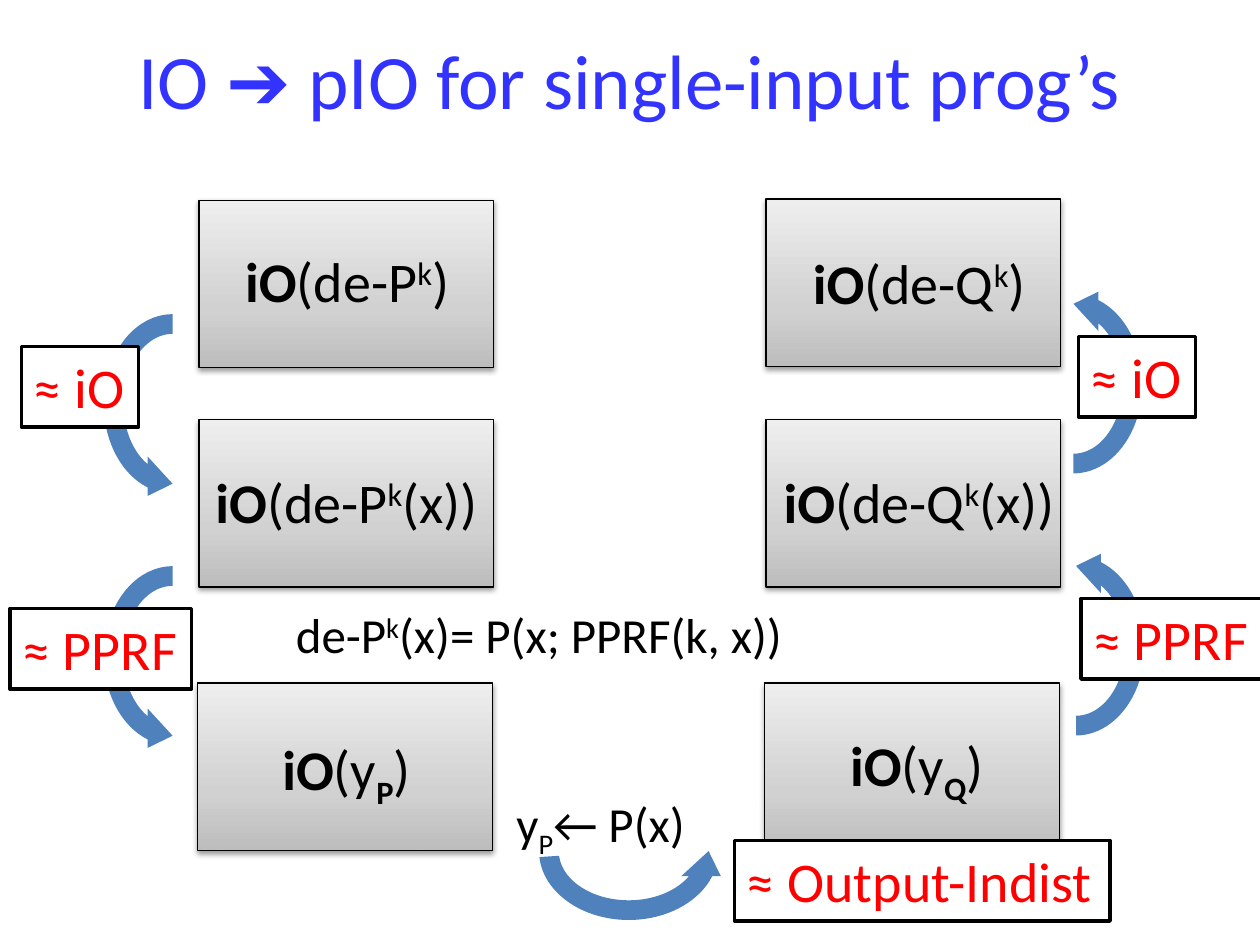
from dataclasses import dataclass

from lxml.etree import SubElement
from pptx import Presentation
from pptx.dml.color import RGBColor
from pptx.enum.shapes import MSO_SHAPE
from pptx.enum.text import MSO_ANCHOR, MSO_AUTO_SIZE, PP_ALIGN
from pptx.oxml import parse_xml
from pptx.oxml.ns import nsdecls, qn
from pptx.util import Inches, Pt

FONT = "Calibri"
BLACK, RED, BLUE, STEEL, WHITE = "000000", "FF0000", "3333FF", "4F81BD", "FFFFFF"
BOX_WIDTH, BOX_HEIGHT = 2.34, 1.33
ARROW_WIDTH, ARROW_HEIGHT = 1.58, 1.25
LABEL_HEIGHT = 0.64
SUPER, SUB = 30000, -25000
GRADIENT_STOPS = ((0, "BDBDBD"), (35000, "D1D1D1"), (100000, "EEEEEE"))


@dataclass
class Piece:
    text: str
    bold: bool = False
    baseline: int = 0


@dataclass
class Program:
    left: float
    top: float
    caption_left: float
    caption_top: float
    caption_width: float
    argument: list[Piece]


@dataclass
class Step:
    arrow_left: float
    arrow_top: float
    flip: str
    rotation: int
    label_left: float
    label_top: float
    label_width: float
    reason: str


def color(value: str) -> RGBColor:
    return RGBColor.from_string(value)


def style_font(paragraph, size: int, hue: str) -> None:
    paragraph.font.name = FONT
    paragraph.font.size = Pt(size)
    paragraph.font.color.rgb = color(hue)


def add_text(slide, left: float, top: float, width: float, height: float,
             pieces: list[Piece], size: int = 32, hue: str = BLACK,
             align=PP_ALIGN.LEFT, wrap: bool = True):
    holder = slide.shapes.add_textbox(Inches(left), Inches(top), Inches(width), Inches(height))
    frame = holder.text_frame
    frame.word_wrap = wrap
    frame.auto_size = MSO_AUTO_SIZE.SHAPE_TO_FIT_TEXT
    paragraph = frame.paragraphs[0]
    paragraph.alignment = align
    style_font(paragraph, size, hue)
    for piece in pieces:
        run = paragraph.add_run()
        run.text = piece.text
        if piece.bold:
            run.font.bold = True
        if piece.baseline:
            run.font._element.set("baseline", str(piece.baseline))
    return holder


def add_program_box(slide, program: Program) -> None:
    box = slide.shapes.add_shape(MSO_SHAPE.RECTANGLE, Inches(program.left), Inches(program.top),
                                 Inches(BOX_WIDTH), Inches(BOX_HEIGHT))
    box.line.color.rgb = color(BLACK)
    box.line.width = Pt(0.75)
    stops = "".join(f'<a:gs pos="{position}"><a:srgbClr val="{hue}"/></a:gs>'
                    for position, hue in GRADIENT_STOPS)
    gradient = parse_xml(f'<a:gradFill {nsdecls("a")} rotWithShape="1"><a:gsLst>{stops}</a:gsLst>'
                         '<a:lin ang="16200000" scaled="0"/></a:gradFill>')
    properties = box.element.spPr
    properties.find(qn("a:prstGeom")).addnext(gradient)
    effects = SubElement(properties, qn("a:effectLst"))
    shadow = SubElement(effects, qn("a:outerShdw"), blurRad="40000", dist="20000",
                        dir="5400000", rotWithShape="0")
    tint = SubElement(shadow, qn("a:srgbClr"), val=BLACK)
    SubElement(tint, qn("a:alpha"), val="38000")


def add_program_caption(slide, program: Program) -> None:
    add_text(slide, program.caption_left, program.caption_top, program.caption_width,
             LABEL_HEIGHT, [Piece("iO", bold=True), *program.argument], align=PP_ALIGN.CENTER)


def add_step(slide, step: Step) -> None:
    arrow = slide.shapes.add_shape(MSO_SHAPE.CIRCULAR_ARROW, Inches(step.arrow_left),
                                   Inches(step.arrow_top), Inches(ARROW_WIDTH),
                                   Inches(ARROW_HEIGHT))
    arrow.shadow.inherit = False
    arrow.fill.solid()
    arrow.fill.fore_color.rgb = color(STEEL)
    arrow.line.fill.background()
    arrow.rotation = step.rotation
    arrow.element.spPr.find(qn("a:xfrm")).set(step.flip, "1")
    if not step.rotation:
        arrow.adjustments[3] = 110.31
    label = add_text(slide, step.label_left, step.label_top, step.label_width, LABEL_HEIGHT,
                     [Piece(f"≈ {step.reason}")], hue=RED, wrap=False)
    label.fill.solid()
    label.fill.fore_color.rgb = color(WHITE)
    label.line.color.rgb = color(BLACK)
    label.line.width = Pt(2)


def derandomized(name: str, ending: str) -> list[Piece]:
    return [Piece(f"(de-{name}"), Piece("k", baseline=SUPER), Piece(ending)]


def output_of(name: str) -> list[Piece]:
    return [Piece("(y"), Piece(name, bold=True, baseline=SUB), Piece(")")]


PROGRAMS = [
    Program(6.08, 1.58, 5.92, 1.92, 2.75, derandomized("Q", ")")),
    Program(1.58, 1.59, 1.42, 1.91, 2.67, derandomized("P", ")")),
    Program(6.08, 3.33, 5.92, 3.66, 2.75, derandomized("Q", "(x))")),
    Program(1.58, 3.33, 0.5, 3.66, 4.5, derandomized("P", "(x))")),
    Program(6.07, 5.42, 5.9, 5.75, 2.75, output_of("Q")),
    Program(1.57, 5.42, 0.5, 5.78, 4.5, output_of("P")),
]
STEPS = [
    Step(0.58, 2.58, "flipV", 90, 0.17, 2.75, 0.93, "iO"),
    Step(0.58, 4.58, "flipV", 90, 0.08, 4.83, 1.44, "PPRF"),
    Step(4.2, 6.13, "flipV", 0, 5.83, 6.67, 2.98, "Output-Indist"),
    Step(7.75, 4.5, "flipH", 90, 8.58, 4.75, 1.44, "PPRF"),
    Step(7.73, 2.42, "flipH", 90, 8.56, 2.67, 0.93, "iO"),
]


def main() -> None:
    deck = Presentation()
    deck.slide_width, deck.slide_height = Inches(10), Inches(7.5)
    slide = deck.slides.add_slide(deck.slide_layouts[5])

    title = slide.shapes.title
    title.left, title.top, title.width, title.height = (
        Inches(0.5), Inches(0), Inches(9), Inches(1.25))
    title.text_frame.text = "IO ➔ pIO for single-input prog’s"
    title.text_frame.vertical_anchor = MSO_ANCHOR.MIDDLE
    heading = title.text_frame.paragraphs[0]
    heading.alignment = PP_ALIGN.CENTER
    style_font(heading, 44, BLUE)

    for program in PROGRAMS:
        add_program_box(slide, program)
    for program in PROGRAMS:
        add_program_caption(slide, program)
    add_text(slide, 2.25, 4.75, 8.42, 0.57,
             [Piece("de-P"), Piece("k", baseline=SUPER), Piece("(x)= P(x; PPRF(k, x))")], size=28)
    add_text(slide, 4, 6.25, 8.42, 0.57,
             [Piece("y"), Piece("P", baseline=SUB), Piece("← P(x)")], size=28)
    for step in STEPS:
        add_step(slide, step)

    deck.save("out.pptx")


if __name__ == "__main__":
    main()
